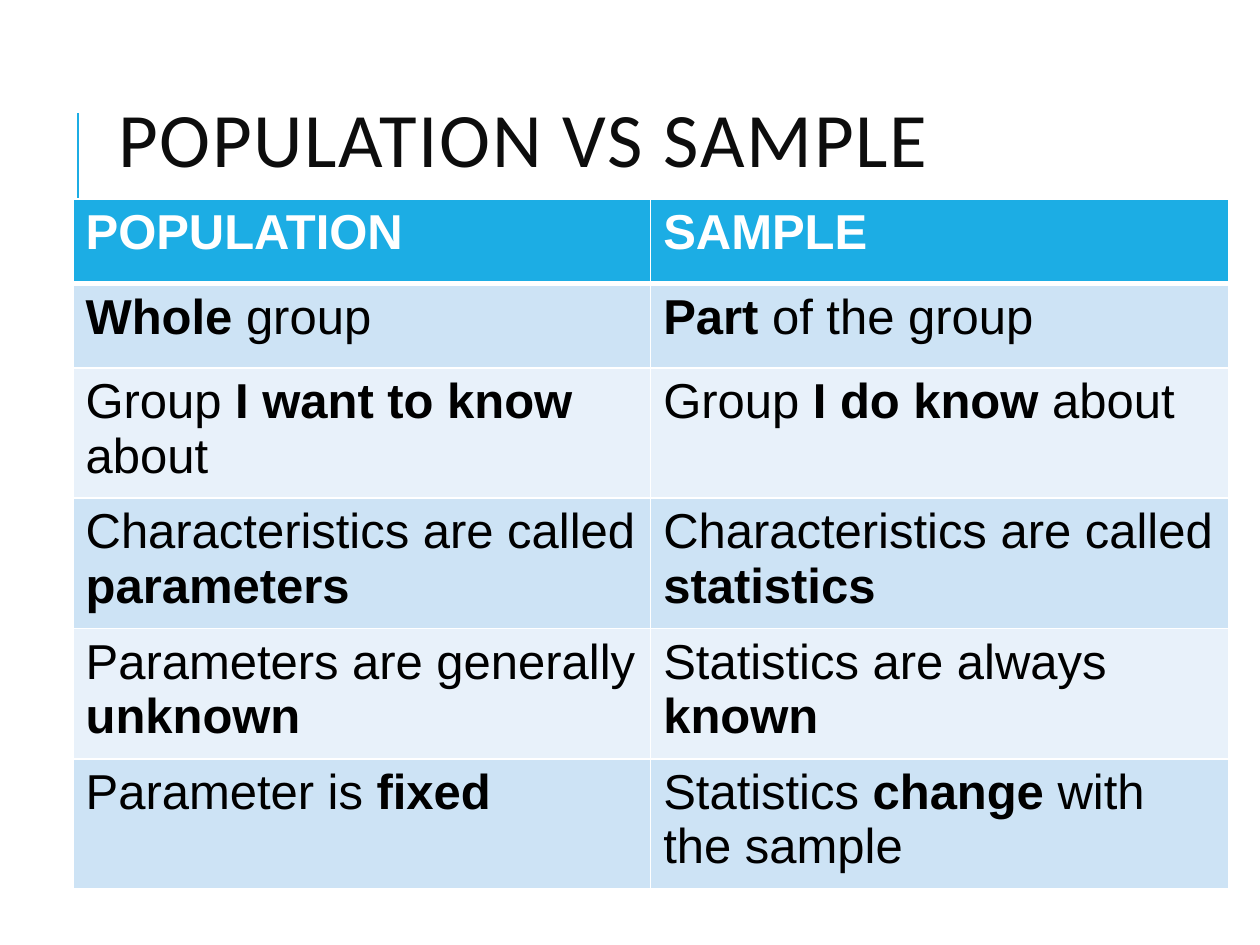
from lxml import etree
from pptx import Presentation
from pptx.dml.color import RGBColor
from pptx.enum.shapes import MSO_CONNECTOR
from pptx.enum.text import MSO_ANCHOR
from pptx.oxml.ns import qn
from pptx.util import Inches, Pt

STRAIGHT = MSO_CONNECTOR.STRAIGHT
MIDDLE = MSO_ANCHOR.MIDDLE

COLORS = {
    "accent": "1CADE4",
    "title": "0D0D0D",
    "header_text": "FFFFFF",
    "body_text": "000000",
    "border": "FFFFFF",
    "band_dark": "CDE3F5",
    "band_light": "E8F1FA",
}

# Words between double asterisks are bold.
ROWS = [
    ("**POPULATION**", "**SAMPLE**"),
    ("**Whole** group", "**Part** of the group"),
    ("Group **I want to know **about", "Group **I do know **about"),
    ("Characteristics are called **parameters**",
     "Characteristics are called **statistics**"),
    ("Parameters are generally **unknown**", "Statistics are always **known**"),
    ("Parameter is **fixed**", "Statistics **change** with the sample"),
]
ROW_HEIGHTS = [0.67] * 3 + [1.03] * 3


def color(name):
    return RGBColor.from_string(COLORS[name])


def add_accent_line(slide, x, top, bottom):
    line = slide.shapes.add_connector(
        STRAIGHT, Inches(x), Inches(bottom), Inches(x), Inches(top))
    line.line.color.rgb = color("accent")
    line.line.width = Pt(1.5)
    etree.SubElement(line._element.spPr, qn("a:effectLst"))


def add_title(slide, left, top, width, height):
    box = slide.shapes.add_textbox(
        Inches(left), Inches(top), Inches(width), Inches(height))
    frame = box.text_frame
    frame.word_wrap = True
    frame.vertical_anchor = MIDDLE
    paragraph = frame.paragraphs[0]
    paragraph.line_spacing = 0.8
    paragraph.font.name = "Calibri"
    paragraph.font.size = Pt(44)
    paragraph.font.color.rgb = color("title")
    run = paragraph.add_run()
    run.text = "POPULATION VS SAMPLE"
    run.font._element.set("spc", "100")


def set_borders(cell, widths):
    """Draw cell borders; widths maps a side (L, R, T, B) to points."""
    properties = cell._tc.get_or_add_tcPr()
    for side, width in widths.items():
        border = etree.SubElement(
            properties, qn(f"a:ln{side}"), w=str(Pt(width)))
        fill = etree.SubElement(border, qn("a:solidFill"))
        etree.SubElement(fill, qn("a:srgbClr"), val=COLORS["border"])


def fill_cell(cell, text, row_index):
    is_header = row_index == 0
    set_borders(cell, {
        "L": 1, "R": 1,
        "T": 3 if row_index == 1 else 1,
        "B": 3 if is_header else 1,
    })
    band = "band_dark" if row_index % 2 else "band_light"
    cell.fill.solid()
    cell.fill.fore_color.rgb = color("accent" if is_header else band)

    paragraph = cell.text_frame.paragraphs[0]
    paragraph.font.name = "Arial"
    paragraph.font.size = Pt(28)
    paragraph.font.color.rgb = color(
        "header_text" if is_header else "body_text")
    for index, part in enumerate(text.split("**")):
        if part:
            run = paragraph.add_run()
            run.text = part
            run.font.bold = index % 2 == 1


def add_comparison_table(slide, left, top, width):
    table = slide.shapes.add_table(
        len(ROWS), len(ROWS[0]), Inches(left), Inches(top),
        Inches(width), Inches(sum(ROW_HEIGHTS))).table
    for row_index, (texts, height) in enumerate(zip(ROWS, ROW_HEIGHTS)):
        table.rows[row_index].height = Inches(height)
        for column_index, text in enumerate(texts):
            fill_cell(table.cell(row_index, column_index), text, row_index)


def main():
    presentation = Presentation()
    presentation.slide_width = Inches(10)
    presentation.slide_height = Inches(7.5)
    slide = presentation.slides.add_slide(presentation.slide_layouts[6])
    add_accent_line(slide, 0.62, 0.9, 1.9)
    add_title(slide, 0.84, 0.64, 7.97, 1.03)
    add_comparison_table(slide, 0.58, 1.58, 9.17)
    presentation.save("out.pptx")


if __name__ == "__main__":
    main()
